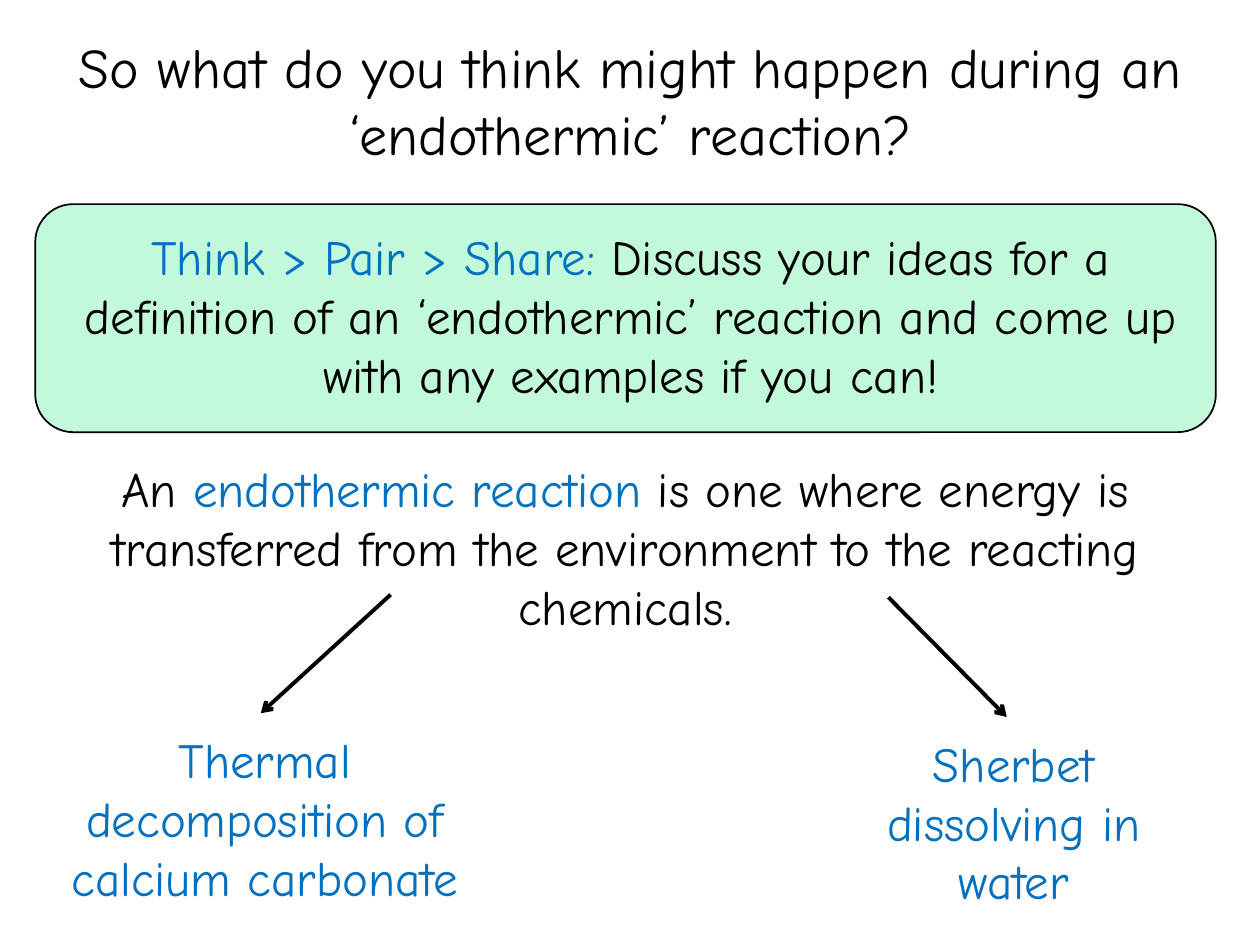
from dataclasses import dataclass
from typing import NamedTuple

from lxml.etree import SubElement
from pptx import Presentation
from pptx.dml.color import RGBColor
from pptx.enum.shapes import MSO_CONNECTOR, MSO_SHAPE
from pptx.enum.text import MSO_AUTO_SIZE, PP_ALIGN
from pptx.oxml.ns import qn
from pptx.util import Inches, Pt

WIDE, HIGH = Inches(10), Inches(7.5)
BLACK, BLUE, MINT = "000000", "0070C0", "C3F9DB"
FACE = "Comic Neue"


class Run(NamedTuple):
    text: str
    tint: str = BLACK


@dataclass
class Para:
    runs: list[Run]
    size: int = 28
    gap: int = 0


@dataclass
class Box:
    left: float
    top: float
    width: float
    height: float
    paras: list[Para]


class Arrow(NamedTuple):
    start: tuple[float, float]
    end: tuple[float, float]


BOXES = [
    Box(2.8, 2.8, 94.5, 40.8, [
        Para([Run("So what do you think might happen during an ‘endothermic’ reaction?")], 32),
        Para([Run("Think > Pair > Share: ", BLUE),
              Run("Discuss your ideas for a definition of an ‘endothermic’ reaction "
                  "and come up with any examples if you can!")], gap=34),
    ]),
    Box(4.3, 47.87, 90.6, 20.13, [
        Para([Run("An "), Run("endothermic reaction ", BLUE),
              Run("is one where energy is transferred from the environment "
                  "to the reacting chemicals.")]),
    ]),
    Box(2.9, 76.53, 36.2, 20.13, [
        Para([Run("Thermal decomposition of calcium carbonate", BLUE)]),
    ]),
    Box(65.9, 76.93, 29.1, 20.13, [
        Para([Run("Sherbet dissolving in water", BLUE)]),
    ]),
]
ARROWS = [
    Arrow((31, 62.93), (20.7, 75.47)),
    Arrow((70.5, 63.2), (79.9, 75.87)),
]


def across(share: float) -> int:
    return round(WIDE * share / 100)


def down(share: float) -> int:
    return round(HIGH * share / 100)


def hue(code: str) -> RGBColor:
    return RGBColor.from_string(code)


def assign(item, values: dict) -> None:
    for name, value in values.items():
        setattr(item, name, value)


def draw_panel(slide) -> None:
    panel = slide.shapes.add_shape(
        MSO_SHAPE.ROUNDED_RECTANGLE, across(2.8), down(21.6), across(93.7), down(24.13))
    panel.shadow.inherit = False
    panel.fill.solid()
    panel.fill.fore_color.rgb = hue(MINT)
    panel.line.color.rgb = hue(BLACK)
    panel.line.width = Pt(1)


def draw_box(slide, box: Box) -> None:
    frame = slide.shapes.add_textbox(
        across(box.left), down(box.top), across(box.width), down(box.height)).text_frame
    assign(frame, {"word_wrap": True, "auto_size": MSO_AUTO_SIZE.SHAPE_TO_FIT_TEXT})
    for index, para in enumerate(box.paras):
        line = frame.add_paragraph() if index else frame.paragraphs[0]
        line.alignment = PP_ALIGN.CENTER
        if para.gap:
            line.space_before = Pt(para.gap)
        for part in para.runs:
            run = line.add_run()
            run.text = part.text
            assign(run.font, {"name": FACE, "size": Pt(para.size)})
            run.font.color.rgb = hue(part.tint)


def draw_arrow(slide, arrow: Arrow) -> None:
    (left, top), (right, base) = arrow
    link = slide.shapes.add_connector(
        MSO_CONNECTOR.STRAIGHT, across(left), down(top), across(right), down(base))
    link.line.color.rgb = hue(BLACK)
    link.line.width = Pt(2.25)
    SubElement(link.line._get_or_add_ln(), qn("a:tailEnd"), type="arrow")
    SubElement(link._element.spPr, qn("a:effectLst"))


def main() -> None:
    deck = Presentation()
    assign(deck, {"slide_width": WIDE, "slide_height": HIGH})
    slide = deck.slides.add_slide(deck.slide_layouts[6])
    draw_panel(slide)
    for box in BOXES:
        draw_box(slide, box)
    for arrow in ARROWS:
        draw_arrow(slide, arrow)
    deck.save("out.pptx")


if __name__ == "__main__":
    main()
